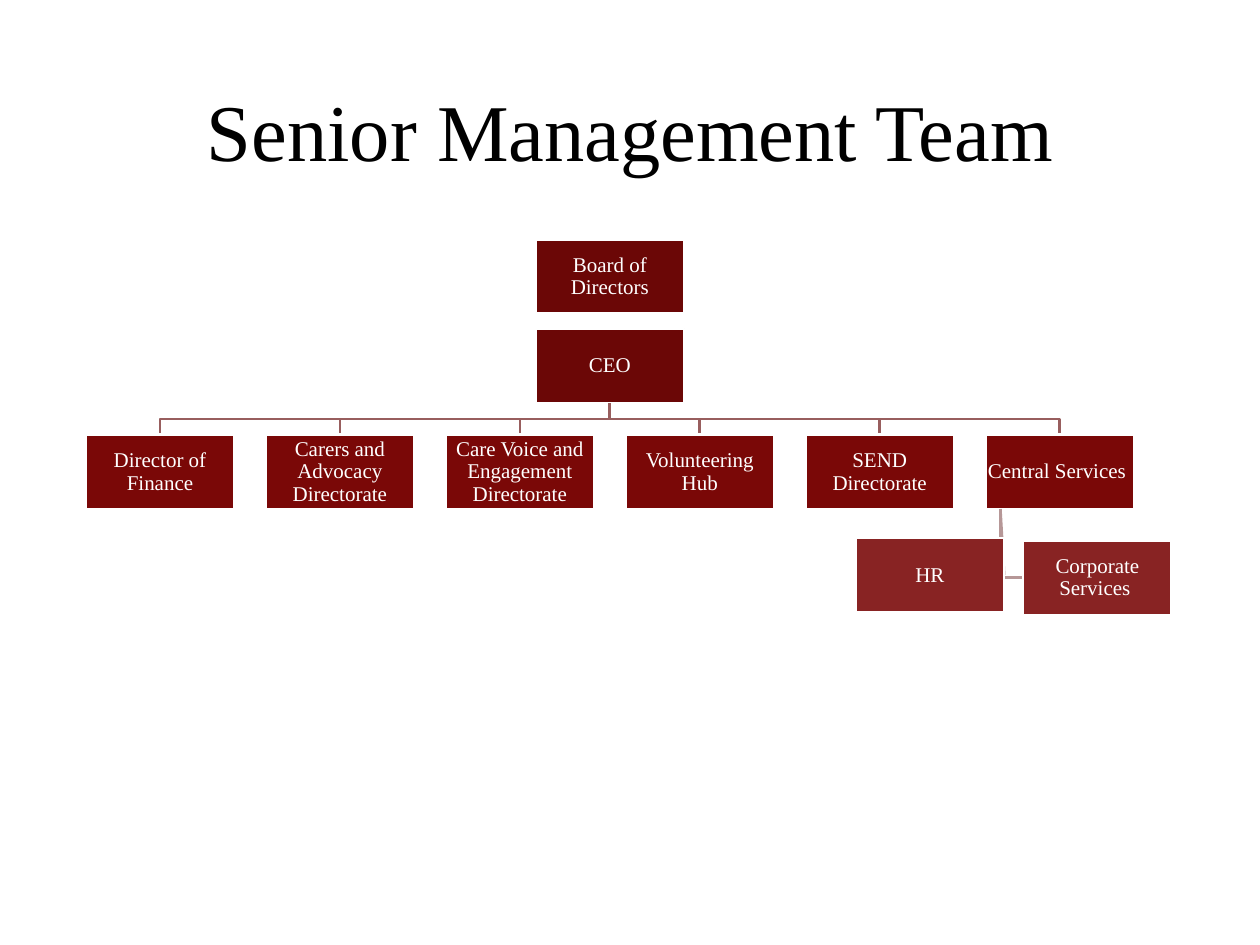
from pptx import Presentation
from pptx.dml.color import RGBColor
from pptx.enum.shapes import MSO_CONNECTOR, MSO_SHAPE
from pptx.enum.text import MSO_ANCHOR, PP_ALIGN
from pptx.oxml.ns import qn
from pptx.util import Inches, Pt
from lxml import etree

RECT = MSO_SHAPE.RECTANGLE
STRAIGHT = MSO_CONNECTOR.STRAIGHT
MIDDLE = MSO_ANCHOR.MIDDLE
CENTER = PP_ALIGN.CENTER

BLACK = RGBColor(0x00, 0x00, 0x00)
WHITE = RGBColor(0xFF, 0xFF, 0xFF)
TOP_RED = RGBColor(0x6B, 0x07, 0x06)
DIRECTOR_RED = RGBColor(0x7A, 0x08, 0x07)
SERVICE_RED = RGBColor(0x88, 0x23, 0x23)
DIRECTOR_LINK = RGBColor(0x98, 0x5E, 0x5E)
SERVICE_LINK = RGBColor(0xB6, 0x97, 0x97)

FONT = "Times New Roman"
LINE_WIDTH = Pt(1.5)
BOX_W, BOX_H = Inches(1.18), Inches(0.59)

DIRECTORS = [
    "Director of Finance",
    "Carers and Advocacy Directorate",
    "Care Voice and Engagement Directorate",
    "Volunteering Hub",
    "SEND Directorate",
    "Central Services ",
]


def write_text(s, text, size, color):
    tf = s.text_frame
    tf.word_wrap = True
    tf.vertical_anchor = MIDDLE
    tf.text = text
    p = tf.paragraphs[0]
    p.alignment = CENTER
    font = p.runs[0].font
    font.name, font.size = FONT, Pt(size)
    font.color.rgb = color
    return tf


def add_title(slide, left, top, width, height):
    s = slide.shapes.add_textbox(left, top, width, height)
    write_text(s, "Senior Management Team", 46, BLACK)


def add_box(slide, left, top, text, fill):
    s = slide.shapes.add_shape(RECT, left, top, BOX_W, BOX_H)
    s.shadow.inherit = False
    s.fill.solid()
    s.fill.fore_color.rgb = fill
    s.line.color.rgb = WHITE
    s.line.width = LINE_WIDTH
    tf = write_text(s, text, 12, WHITE)
    tf.margin_left = tf.margin_right = Inches(0.01)
    tf.margin_top = tf.margin_bottom = Inches(0.01)
    tf.paragraphs[0].line_spacing = 0.9
    return s


def add_elbow(slide, points, color):
    """Draw an open angled link through the given points."""
    builder = slide.shapes.build_freeform(*points[0])
    builder.add_line_segments(points[1:], close=False)
    s = builder.convert_to_shape()
    s.shadow.inherit = False
    s.fill.background()
    s.line.color.rgb = color
    s.line.width = LINE_WIDTH


def add_straight(slide, start, end, color):
    link = slide.shapes.add_connector(STRAIGHT, *start, *end)
    link.line.color.rgb = color
    link.line.width = LINE_WIDTH
    etree.SubElement(link._element.spPr, qn("a:effectLst"))


def add_leadership(slide, left, top):
    add_box(slide, left, top, "Board of Directors", TOP_RED)
    return add_box(slide, left, top + Inches(0.71), "CEO", TOP_RED)


def add_directors(slide, left, top, width, ceo):
    """Spread the directors evenly over the width and link each to the CEO."""
    pitch = (width - BOX_W) // (len(DIRECTORS) - 1)
    lefts = [left + i * pitch for i in range(len(DIRECTORS))]
    trunk_x, trunk_y = ceo.left + BOX_W // 2, ceo.top + BOX_H
    bar_y = (trunk_y + top) // 2
    for x in lefts:
        mid = x + BOX_W // 2
        points = [(trunk_x, trunk_y), (trunk_x, bar_y), (mid, bar_y), (mid, top)]
        add_elbow(slide, points, DIRECTOR_LINK)
    return [add_box(slide, x, top, text, DIRECTOR_RED)
            for x, text in zip(lefts, DIRECTORS)]


def add_services(slide, left, top, central):
    """Place the two services and hang them from Central Services."""
    corporate_left, corporate_top = left + Inches(1.33), top + Inches(0.02)
    stem_x, stem_y = central.left + Inches(0.12), central.top + BOX_H
    corporate_mid = corporate_top + BOX_H // 2
    add_straight(slide, (stem_x, stem_y),
                 (stem_x + Inches(0.03), top + BOX_H // 2), SERVICE_LINK)
    add_elbow(slide, [(stem_x, stem_y), (stem_x, corporate_mid),
                      (corporate_left, corporate_mid)], SERVICE_LINK)
    add_box(slide, corporate_left, corporate_top, "Corporate Services ", SERVICE_RED)
    add_box(slide, left, top, "HR", SERVICE_RED)


def main():
    prs = Presentation()
    prs.slide_width, prs.slide_height = Inches(10), Inches(7.5)
    slide = prs.slides.add_slide(prs.slide_layouts[6])
    add_title(slide, Inches(1), Inches(0.55), Inches(8), Inches(0.95))
    ceo = add_leadership(slide, Inches(4.25), Inches(1.9))
    directors = add_directors(slide, Inches(0.68), Inches(3.45), Inches(8.32), ceo)
    add_services(slide, Inches(6.79), Inches(4.27), directors[-1])
    prs.save("out.pptx")


if __name__ == "__main__":
    main()
